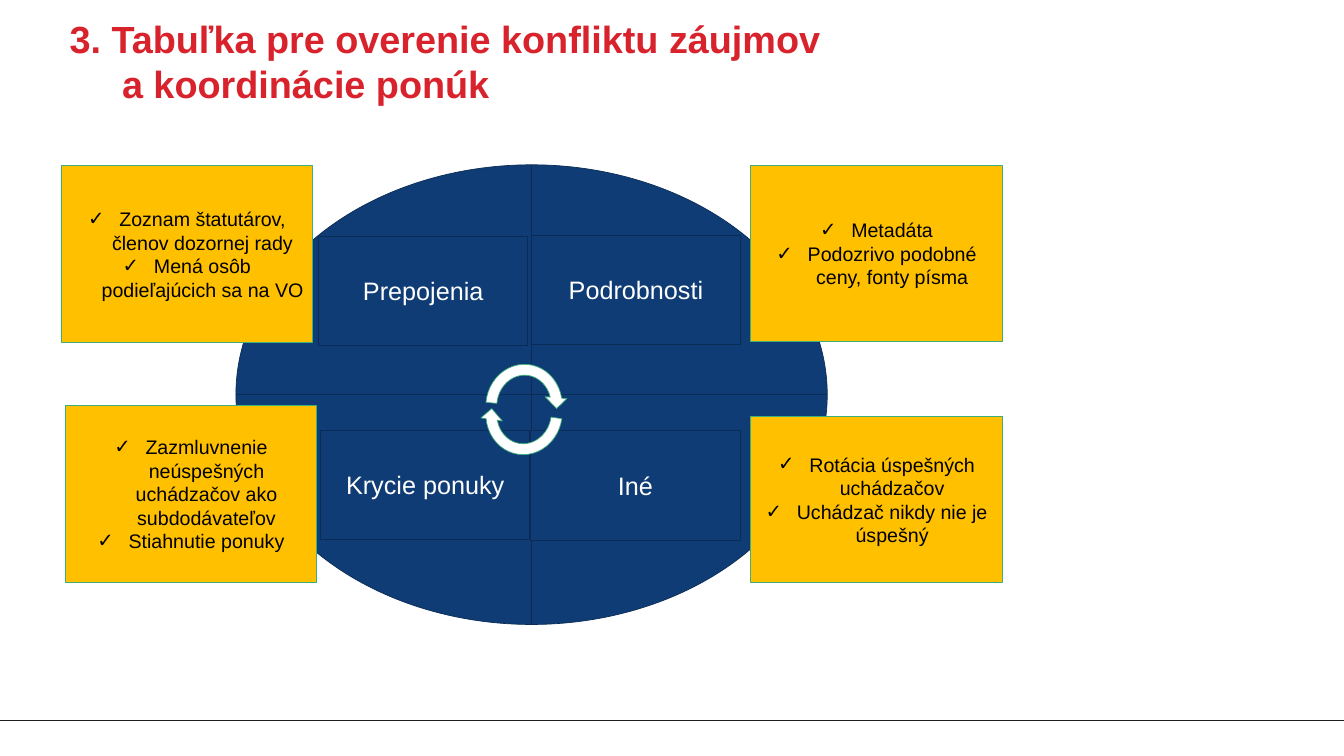
import pptx
import pptx.dml.color
import pptx.enum.shapes
import pptx.enum.text
import pptx.oxml.ns
import pptx.util
from lxml import etree

Inches = pptx.util.Inches
Pt = pptx.util.Pt
RGBColor = pptx.dml.color.RGBColor
Shape = pptx.enum.shapes.MSO_SHAPE
Align = pptx.enum.text.PP_ALIGN
Anchor = pptx.enum.text.MSO_ANCHOR
qn = pptx.oxml.ns.qn

RED = RGBColor(0xD8, 0x22, 0x2C)
NAVY = RGBColor(0x0F, 0x3C, 0x74)
NAVY_EDGE = RGBColor(0x0B, 0x2C, 0x56)
AMBER = RGBColor(0xFF, 0xC0, 0x00)
GREEN = RGBColor(0x3E, 0xAF, 0x79)
INK = RGBColor(0x1D, 0x1E, 0x1C)
WHITE = RGBColor(0xFF, 0xFF, 0xFF)
BLACK = RGBColor(0x00, 0x00, 0x00)

TITLE_LINES = ["3. Tabuľka pre overenie konfliktu záujmov", "a koordinácie ponúk"]
QUADRANTS = [
    ("Prepojenia", 6.32, 4.68),
    ("Krycie ponuky", 6.36, 8.53),
    ("Podrobnosti", 10.54, 4.66),
    ("Iné", 10.53, 8.54),
]
CARDS = [
    ((1.21, 3.29, 4.99, 3.5),
     ["Zoznam štatutárov, členov dozornej rady", "Mená osôb podieľajúcich sa na VO"]),
    ((14.89, 8.27, 4.99, 3.28),
     ["Rotácia úspešných uchádzačov", "Uchádzač nikdy nie je úspešný"]),
    ((1.29, 8.05, 4.99, 3.5),
     ["Zazmluvnenie neúspešných uchádzačov ako subdodávateľov", "Stiahnutie ponuky"]),
    ((14.89, 3.28, 4.99, 3.5),
     ["Metadáta", "Podozrivo podobné ceny, fonty písma"]),
]


def add_block(slide, kind, box, fill, edge):
    """Add a flat, outlined preset shape in a box given in inches."""
    shape = slide.shapes.add_shape(kind, *(Inches(value) for value in box))
    shape.shadow.inherit = False
    shape.fill.solid()
    shape.fill.fore_color.rgb = fill
    shape.line.color.rgb = edge
    shape.line.width = Pt(1)
    return shape


def add_words(paragraph, text, size, color, bold=False):
    """Append one formatted run to a paragraph."""
    run = paragraph.add_run()
    run.text = text
    run.font.name = "Arial"
    run.font.size = Pt(size)
    run.font.bold = bold
    run.font.color.rgb = color


def set_hanging(paragraph, indent):
    """Set a hanging indent in inches and return the paragraph properties."""
    properties = paragraph._p.get_or_add_pPr()
    properties.set("marL", str(Inches(indent)))
    properties.set("indent", str(-Inches(indent)))
    return properties


def add_title(slide, box):
    """Place the two-line heading in the title placeholder."""
    title = slide.shapes.title
    title.left, title.top, title.width, title.height = (Inches(value) for value in box)
    frame = title.text_frame
    frame.word_wrap = True
    frame.auto_size = pptx.enum.text.MSO_AUTO_SIZE.NONE
    frame.vertical_anchor = Anchor.TOP
    frame.margin_left = frame.margin_right = frame.margin_bottom = 0
    frame.margin_top = Inches(0.02)
    paragraph = frame.paragraphs[0]
    set_hanging(paragraph, 1.04)
    paragraph.alignment = Align.LEFT
    paragraph.line_spacing = 1.0
    add_words(paragraph, TITLE_LINES[0], 54, RED, True)
    paragraph.add_line_break()
    add_words(paragraph, TITLE_LINES[1], 54, RED, True)


def add_footer_rule(slide, box):
    """Draw one horizontal rule along the top of its box."""
    left, top, width, _ = box
    rule = slide.shapes.add_connector(
        pptx.enum.shapes.MSO_CONNECTOR.STRAIGHT,
        Inches(left), Inches(top), Inches(left + width), Inches(top))
    rule.line.color.rgb = INK
    rule.line.width = Pt(1.5)
    etree.SubElement(rule._element.spPr, qn("a:effectLst"))


def add_wheel(slide, box):
    """Draw the quartered ellipse with its four labels and cycle arrows."""
    add_block(slide, Shape.FLOWCHART_OR, box, NAVY, NAVY_EDGE)
    wheel_left, wheel_top = box[:2]
    for label, left, top in QUADRANTS:
        panel = add_block(slide, Shape.RECTANGLE, (left, top, 4.15, 2.18), NAVY, NAVY_EDGE)
        panel.text_frame.word_wrap = True
        panel.text_frame.vertical_anchor = Anchor.MIDDLE
        paragraph = panel.text_frame.paragraphs[0]
        paragraph.alignment = Align.CENTER
        add_words(paragraph, label, 36, WHITE)
    for offset, rotation in ((4, 188.2), (3.85, 5)):
        arrow = add_block(
            slide, Shape.CIRCULAR_ARROW,
            (wheel_left + 4.85, wheel_top + offset, 1.73, 1.86), WHITE, GREEN)
        arrow.rotation = rotation


def add_card(slide, box, items):
    """Place an amber card with a centred tick list."""
    card = add_block(slide, Shape.RECTANGLE, box, AMBER, GREEN)
    frame = card.text_frame
    frame.word_wrap = True
    frame.vertical_anchor = Anchor.MIDDLE
    for index, item in enumerate(items):
        paragraph = frame.add_paragraph() if index else frame.paragraphs[0]
        properties = set_hanging(paragraph, 0.62)
        etree.SubElement(properties, qn("a:buFont"), typeface="Arial")
        etree.SubElement(properties, qn("a:buChar"), char="✓")
        paragraph.alignment = Align.CENTER
        add_words(paragraph, item, 28, BLACK)


def main():
    """Build the slide and save the presentation."""
    presentation = pptx.Presentation()
    presentation.slide_width = Inches(26.66)
    presentation.slide_height = Inches(15)
    slide = presentation.slides.add_slide(presentation.slide_layouts[5])
    add_footer_rule(slide, (0.01, 14.29, 26.64, 0))
    add_title(slide, (1.38, 0.29, 23.91, 3))
    add_wheel(slide, (4.68, 3.27, 11.73, 9.12))
    for box, items in CARDS:
        add_card(slide, box, items)
    presentation.save("out.pptx")


if __name__ == "__main__":
    main()
